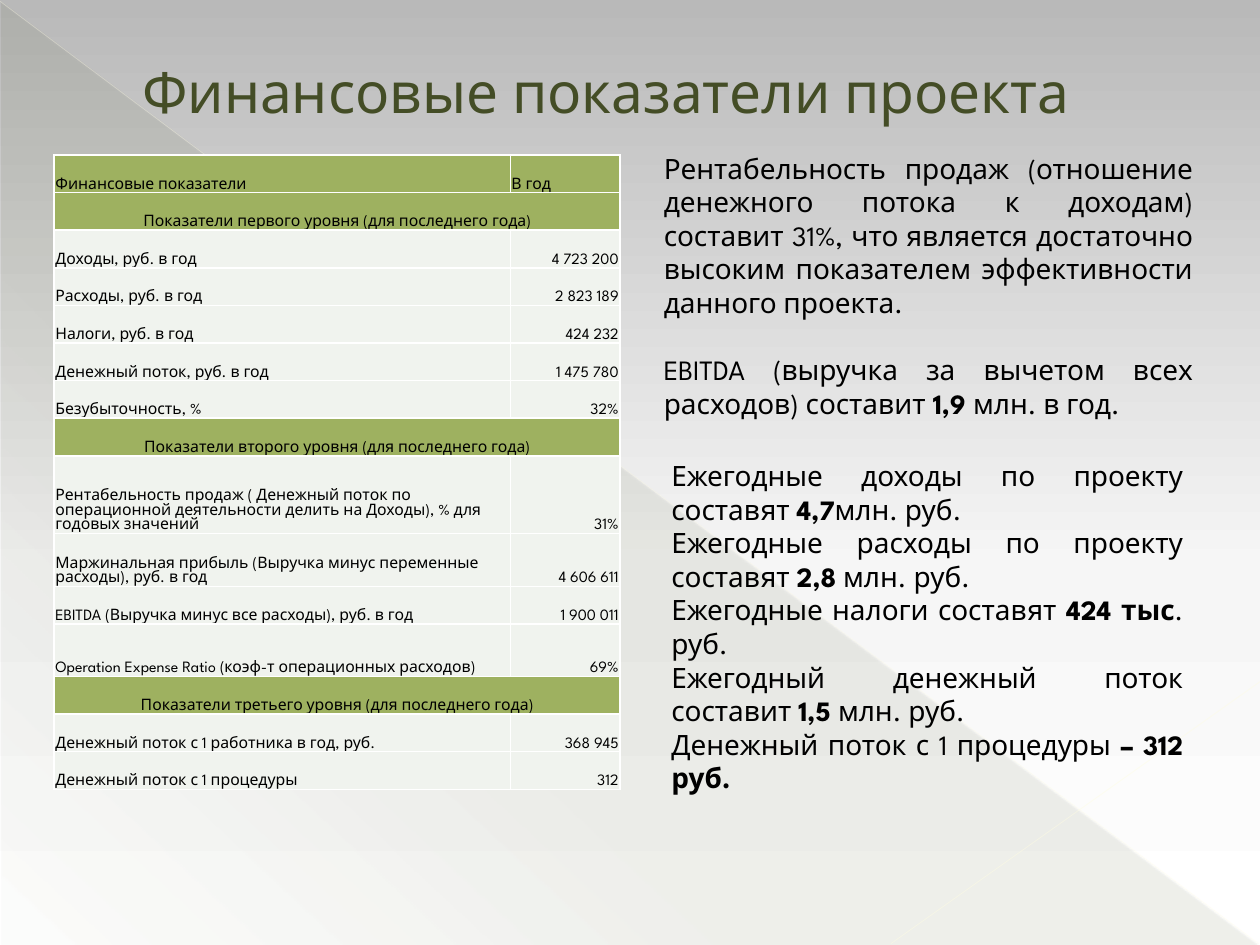
from lxml import etree
from pptx import Presentation
from pptx.dml.color import RGBColor
from pptx.enum.shapes import MSO_CONNECTOR, MSO_SHAPE
from pptx.enum.text import MSO_ANCHOR, MSO_AUTO_SIZE, PP_ALIGN
from pptx.oxml import parse_xml
from pptx.oxml.ns import qn
from pptx.util import Inches, Pt

LEFT, CENTER, RIGHT, JUSTIFY = PP_ALIGN.LEFT, PP_ALIGN.CENTER, PP_ALIGN.RIGHT, PP_ALIGN.JUSTIFY
FONT = "League Spartan"
W, H = 10, 7.5
NS = "http://schemas.openxmlformats.org/drawingml/2006/main"
COLORS = {"title": "444D26", "text": "000000", "head": "9EB160", "row": "F0F3EE",
          "border": "FFFFFF", "ray": "FFFDE3"}

# Content
TITLE = "Финансовые показатели проекта"
BG_STOPS = [(0, "B9B9B9", 100), (60, "F6F6F6", 100), (100, "FFFFFF", 100)]
TRIANGLE_STOPS = [(0, "444D26", 10), (70, "444D26", 8), (100, "444D26", 1)]
RAYS = [((0, 0.01), (9.99, 7.49), 0.39, 35), ((10, 5.41), (7.07, 7.49), 0.47, 45)]

# Rows: label, value (None marks a section heading), relative height
ROWS = [
    ("Финансовые показатели", "В год", 0.3),
    ("Показатели первого уровня (для последнего года)", None, 0.3),
    ("Доходы, руб. в год", "4 723 200", 0.3),
    ("Расходы, руб. в год", "2 823 189", 0.3),
    ("Налоги, руб. в год", "424 232", 0.3),
    ("Денежный поток, руб. в год", "1 475 780", 0.3),
    ("Безубыточность, %", "32%", 0.3),
    ("Показатели второго уровня (для последнего года)", None, 0.3),
    ("Рентабельность продаж ( Денежный поток по операционной деятельности делить на Доходы), "
     "% для годовых значений", "31%", 0.62),
    ("Маржинальная прибыль (Выручка минус переменные расходы), руб. в год", "4 606 611", 0.42),
    ("EBITDA (Выручка минус все расходы), руб. в год", "1 900 011", 0.3),
    ("Operation Expense Ratio (коэф-т операционных расходов)", "69%", 0.42),
    ("Показатели третьего уровня (для последнего года)", None, 0.3),
    ("Денежный поток с 1 работника в год, руб.", "368 945", 0.3),
    ("Денежный поток с 1 процедуры", "312", 0.3),
]
TABLE_BOX = (0.43, 1.23, 4.49, 5.04)
COLS = (3.62, 0.87)

# Text blocks: box, gap between paragraphs in points, paragraphs (** switches bold)
NOTES = [
    ((5.23, 3.59, 4.26, 2.79), 0, [
        "Ежегодные доходы по проекту составят **4,7**млн. руб.",
        "Ежегодные расходы по проекту составят **2,8** млн. руб.",
        "Ежегодные налоги составят **424 тыс**. руб.",
        "Ежегодный денежный поток составит **1,5 **млн. руб.",
        "Денежный поток с 1 процедуры **– 312 руб.**",
    ]),
    ((5.17, 1.15, 4.4, 2.26), 19.2, [
        "Рентабельность продаж (отношение денежного потока к доходам) составит 31%, что является "
        "достаточно высоким показателем эффективности данного проекта.",
        "EBITDA (выручка за вычетом всех расходов) составит **1,9 **млн. в год.",
    ]),
]


def rgb(name):
    return RGBColor.from_string(COLORS[name])


def inches(values):
    return [Inches(v) for v in values]


def gradient(root, stops, angle):
    """Put a linear gradient in place of the first empty fill under root."""
    gs = "".join(f'<a:gs pos="{pos * 1000}"><a:srgbClr val="{c}"><a:alpha val="{a * 1000}"/>'
                 f'</a:srgbClr></a:gs>' for pos, c, a in stops)
    empty = root.find(".//" + qn("a:noFill"))
    empty.getparent().replace(empty, parse_xml(
        f'<a:gradFill xmlns:a="{NS}" rotWithShape="1"><a:gsLst>{gs}</a:gsLst>'
        f'<a:lin ang="{angle * 60000}" scaled="0"/></a:gradFill>'))


def write(p, text, size, align=LEFT, color="text", spacing=None):
    p.alignment = align
    if spacing:
        p.line_spacing = Pt(spacing)
    for i, part in enumerate(text.split("**")):
        if part:
            r = p.add_run()
            r.text = part
            r.font.name, r.font.size, r.font.bold = FONT, Pt(size), i % 2 == 1
            r.font.color.rgb = rgb(color)


def set_borders(cell):
    tc_pr = cell._tc.get_or_add_tcPr()
    for i, side in enumerate(("lnL", "lnR", "lnT", "lnB")):
        tc_pr.insert(i, parse_xml(
            f'<a:{side} xmlns:a="{NS}" w="12700"><a:solidFill>'
            f'<a:srgbClr val="{COLORS["border"]}"/></a:solidFill></a:{side}>'))


def add_backdrop(slide):
    slide.background.fill.background()
    gradient(slide._element, BG_STOPS, 90)
    sp = slide.shapes.add_shape(MSO_SHAPE.RIGHT_TRIANGLE, *inches((0.01, 0.02, W - 0.02, H - 0.02)))
    sp.shadow.inherit = False
    sp.fill.background()
    gradient(sp._element, TRIANGLE_STOPS, 133)
    sp.line.fill.background()
    for start, end, width, opacity in RAYS:
        ray = slide.shapes.add_connector(MSO_CONNECTOR.STRAIGHT, *inches(start + end))
        ray.line.width = Pt(width)
        ray.line.color.rgb = rgb("ray")
        clr = ray._element.spPr.find(".//" + qn("a:srgbClr"))
        etree.SubElement(clr, qn("a:alpha")).set("val", str(opacity * 1000))
        etree.SubElement(ray._element.spPr, qn("a:effectLst"))


def add_title(slide):
    tf = slide.shapes.add_textbox(*inches((0.5, 0.29, 9, 0.86))).text_frame
    tf.word_wrap = True
    tf.vertical_anchor = MSO_ANCHOR.MIDDLE
    p = tf.paragraphs[0]
    p._p.get_or_add_pPr().set("marL", str(Inches(0.53)))
    write(p, TITLE, 32.4, color="title")


def add_notes(slide):
    for box, gap, paragraphs in NOTES:
        tf = slide.shapes.add_textbox(*inches(box)).text_frame
        tf.word_wrap = True
        tf.auto_size = MSO_AUTO_SIZE.SHAPE_TO_FIT_TEXT
        for i, text in enumerate(paragraphs):
            p = tf.add_paragraph() if i else tf.paragraphs[0]
            if i and gap:
                p.space_before = Pt(gap)
            write(p, text, 16, JUSTIFY, spacing=19.2)


def add_indicators(slide):
    table = slide.shapes.add_table(len(ROWS), len(COLS), *inches(TABLE_BOX)).table
    for col, width in zip(table.columns, COLS):
        col.width = Inches(width)
    unit = TABLE_BOX[3] / sum(row[2] for row in ROWS)
    for i, (label, value, height) in enumerate(ROWS):
        table.rows[i].height = Inches(height * unit)
        section = value is None
        for j, text in enumerate((label, value)):
            cell = table.cell(i, j)
            cell.margin_left = cell.margin_right = cell.margin_top = Inches(0.01)
            cell.margin_bottom = 0
            cell.vertical_anchor = MSO_ANCHOR.BOTTOM
            cell.fill.solid()
            cell.fill.fore_color.rgb = rgb("head" if section or i == 0 else "row")
            set_borders(cell)
            align = CENTER if section else RIGHT if i and j else LEFT
            write(cell.text_frame.paragraphs[0], text or "", 9, align, spacing=8.3)
        if section:
            table.cell(i, 0).merge(table.cell(i, 1))


def main():
    prs = Presentation()
    prs.slide_width, prs.slide_height = Inches(W), Inches(H)
    slide = prs.slides.add_slide(prs.slide_layouts[6])
    add_backdrop(slide)
    add_title(slide)
    add_notes(slide)
    add_indicators(slide)
    prs.save("out.pptx")


if __name__ == "__main__":
    main()
